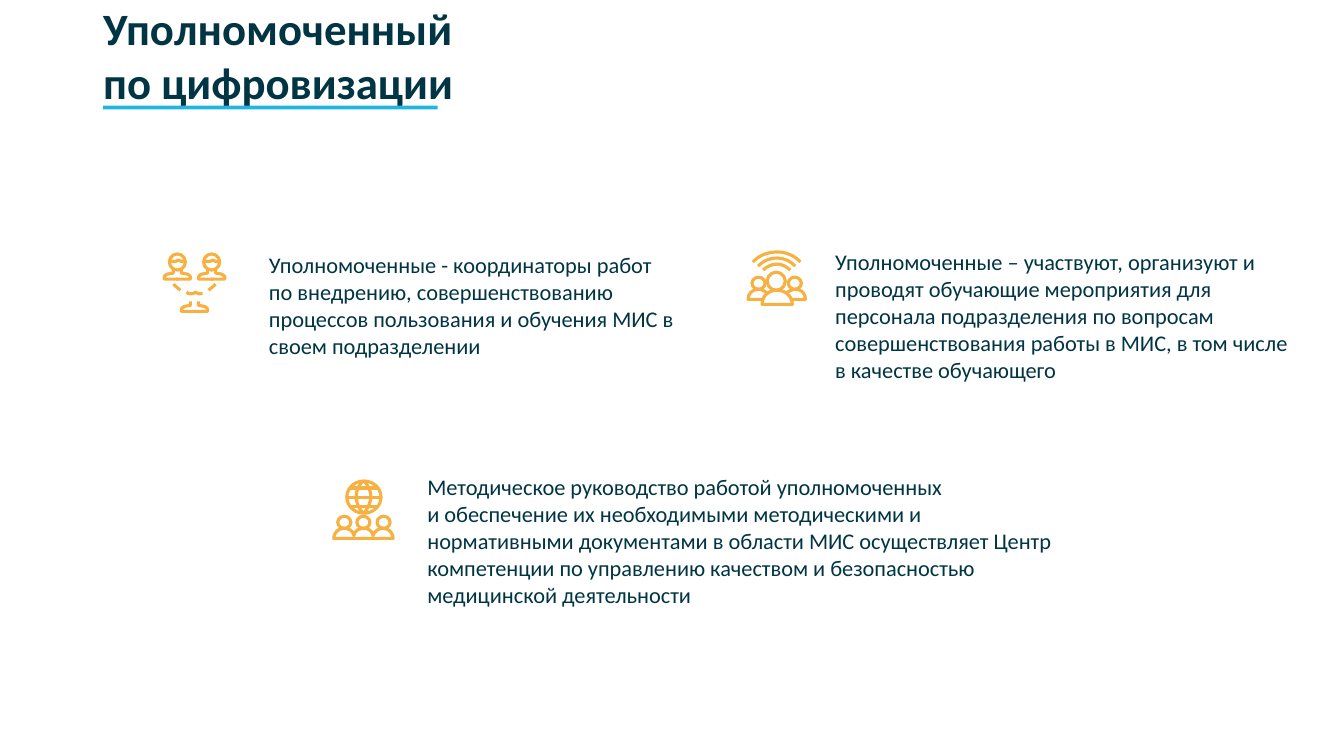
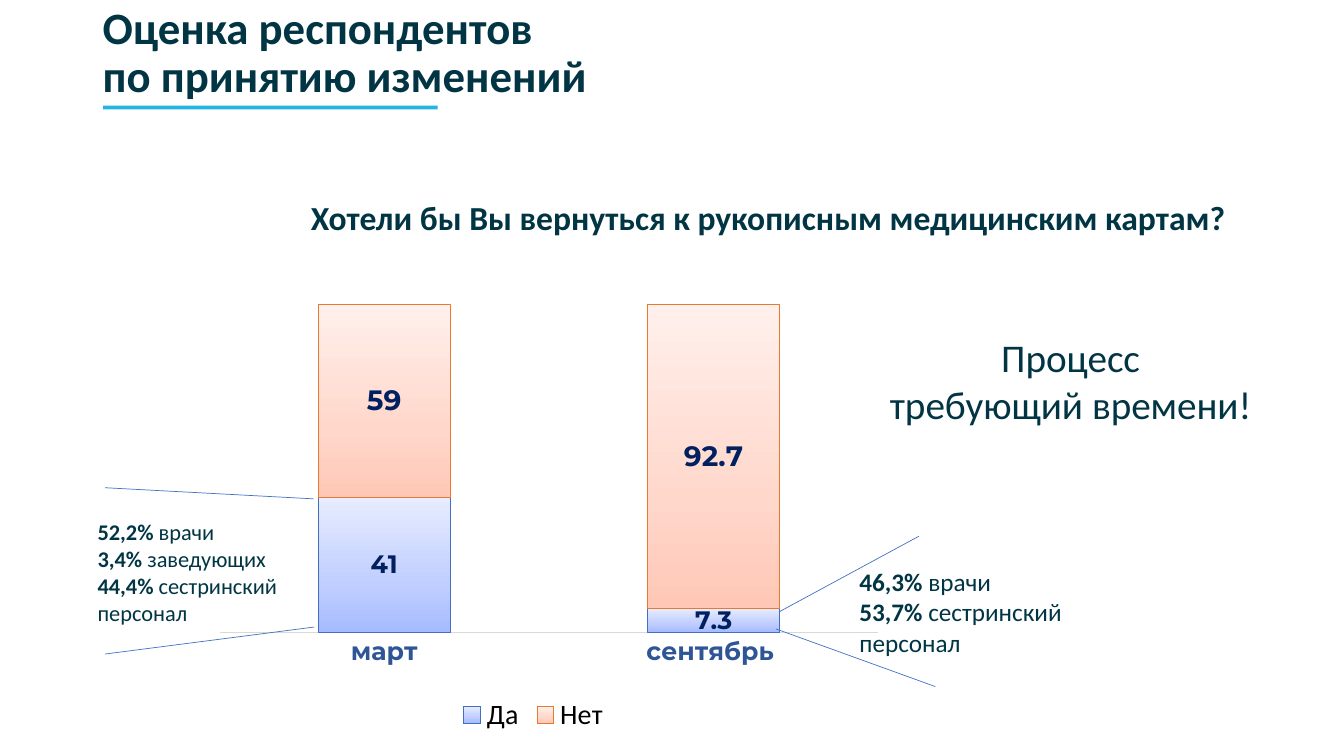
"""Build two slides: the digitalization officers and the survey on accepting change."""
from dataclasses import dataclass
from typing import NamedTuple

from lxml.etree import SubElement
from pptx import Presentation
from pptx.chart.data import CategoryChartData
from pptx.dml.color import RGBColor
from pptx.enum.chart import XL_CHART_TYPE, XL_LABEL_POSITION, XL_LEGEND_POSITION, XL_TICK_MARK
from pptx.enum.shapes import MSO_CONNECTOR, MSO_SHAPE
from pptx.enum.text import MSO_ANCHOR, PP_ALIGN
from pptx.oxml import parse_xml
from pptx.oxml.ns import nsdecls, qn
from pptx.util import Cm, Pt


@dataclass(frozen=True)
class Theme:
    font: str = "Calibri"
    chart_font: str = "Montserrat"
    ink: str = "013544"
    accent: str = "21B6E1"
    icon: str = "F6B142"
    callout: str = "4472C4"
    axis: str = "D9D9D9"
    category: str = "2F5597"
    value: str = "002060"
    black: str = "000000"
    title_size: float = 32
    statement_size: float = 28
    question_size: float = 24
    legend_size: float = 20
    large_size: float = 18
    body_size: float = 16
    chart_size: float = 10
    icon_width: float = 2.25
    chart_width: float = 0.75
    callout_width: float = 0.5


class Box(NamedTuple):
    left: float
    top: float
    width: float
    height: float


class Segment(NamedTuple):
    start_x: float
    start_y: float
    end_x: float
    end_y: float


class Stroke(NamedTuple):
    start: tuple
    steps: tuple
    closed: bool = False


@dataclass(frozen=True)
class Icon:
    left: float
    top: float
    circles: tuple
    strokes: tuple
    segments: tuple = ()


@dataclass(frozen=True)
class Answer:
    name: str
    values: tuple
    gradient: tuple
    outline: str
    label_size: float


THEME = Theme()
ICON_UNIT = Cm(2.54) / 100
GRADIENT_POSITIONS = (0, 35, 100)
AXIS_MAXIMUM = 120
PLOT_AREA = {"x": 0.045, "y": 0.025, "w": 0.955, "h": 0.769}


def shifted(stroke: Stroke, right: float, down: float) -> Stroke:
    """Return the stroke moved by the given icon units."""
    def move(values: tuple) -> tuple:
        return tuple(value + (down if index % 2 else right) for index, value in enumerate(values))
    return Stroke(move(stroke.start), tuple(move(step) for step in stroke.steps), stroke.closed)


BUST = (
    Stroke((9, 15), ((9, 19), (3, 20), (1, 21, 0, 22, 0, 23), (0, 25), (14, 25))),
    Stroke((17, 15), ((17, 19), (23, 20), (25, 21, 26, 22, 26, 23), (26, 25), (12, 25))),
    Stroke((21, 7), ((19, 8, 16, 8, 14, 6), (12, 8, 7, 8, 5, 6))),
)
COORDINATORS = Icon(
    4.14, 6.4,
    circles=(Box(5, 0, 16, 16), Box(39, 0, 16, 16)),
    strokes=tuple(shifted(stroke, *offset) for offset in ((0, 0), (34, 0), (17, 32)) for stroke in BUST),
    segments=(Segment(9, 30, 16, 36), Segment(51, 30, 44, 36)),
)
TRAINERS = Icon(
    18.85, 6.35,
    circles=(Box(4, 25, 13, 12), Box(40, 25, 13, 12), Box(19, 20, 18, 18)),
    strokes=(
        Stroke((14, 47), ((0, 47), (0, 41, 5, 37, 10, 37), (14, 37, 17, 39, 19, 41))),
        Stroke((38, 41), ((40, 39, 44, 37, 47, 37), (53, 37, 57, 41, 57, 47), (43, 47))),
        Stroke((15, 18), ((18, 15, 23, 12, 29, 12), (34, 12, 39, 15, 42, 18))),
        Stroke((10, 14), ((15, 9, 21, 6, 29, 6), (36, 6, 42, 9, 47, 14))),
        Stroke((5, 10), ((10, 4, 19, 0, 29, 0), (38, 0, 47, 4, 52, 10))),
        Stroke((44, 52), ((14, 52), (14, 44, 20, 38, 29, 38), (37, 38, 44, 44, 44, 52)), True),
    ),
)
GUIDANCE = Icon(
    8.41, 12.12,
    circles=(Box(13, 0, 34, 32), Box(4, 35, 13, 12), Box(23, 35, 13, 12), Box(43, 35, 13, 12)),
    strokes=(
        Stroke((29, 0), ((20, 9, 20, 21, 29, 32),)),
        Stroke((30, 0), ((39, 9, 39, 21, 30, 32),)),
        Stroke((49, 47), (
            (45, 47, 41, 49, 39, 54), (38, 49, 34, 47, 30, 47), (25, 47, 21, 49, 20, 54),
            (19, 49, 15, 47, 10, 47), (4, 47, 0, 52, 0, 57), (59, 57), (59, 52, 55, 47, 49, 47),
        ), True),
    ),
    segments=(Segment(15, 25, 44, 25), Segment(15, 7, 44, 7), Segment(13, 16, 47, 16)),
)
DUTIES = (
    (COORDINATORS, Box(6.53, 6.21, 10.8, 3.66), (
        "Уполномоченные - координаторы работ по внедрению, совершенствованию процессов "
        "пользования и обучения МИС в своем подразделении",
    )),
    (TRAINERS, Box(20.8, 6.14, 12.01, 4.37), (
        "Уполномоченные – участвуют, организуют и проводят обучающие мероприятия для персонала "
        "подразделения по вопросам совершенствования работы в МИС, в том числе в качестве обучающего",
    )),
    (GUIDANCE, Box(10.52, 11.81, 16.64, 4.37), (
        "Методическое руководство работой уполномоченных",
        "и обеспечение их необходимыми методическими и нормативными документами в области МИС "
        "осуществляет Центр компетенции по управлению качеством и безопасностью медицинской деятельности",
    )),
)
ANSWERS = (
    Answer("Да", (41, 7.3), ("A6BBFF", "C0CEFF", "E7ECFF"), "436FC0", THEME.large_size),
    Answer("Нет", (59, 92.7), ("FFC7B6", "FFD7CB", "FFF0EB"), "E87A30", THEME.legend_size),
)
CALLOUT_LINES = (
    Segment(19.63, 15.42, 23.16, 13.51),
    Segment(2.65, 12.29, 7.9, 12.57),
    Segment(2.65, 16.48, 7.92, 15.8),
    Segment(19.56, 15.85, 23.57, 17.3),
)


def color(value: str) -> RGBColor:
    """Turn a hex string into a colour."""
    return RGBColor.from_string(value)


def style_font(font, size: float, tint: str, *, bold: bool = False, name: str = THEME.font) -> None:
    """Set the face, size, colour and weight of a font."""
    font.name, font.size, font.bold = name, Pt(size), bold
    font.color.rgb = color(tint)


def style_line(line, tint: str, width: float) -> None:
    """Set the colour and width of a line."""
    line.color.rgb = color(tint)
    line.width = Pt(width)


def add_text(slide, box: Box, paragraphs: tuple, *, size: float = THEME.body_size, bold: bool = False,
             align: PP_ALIGN = PP_ALIGN.LEFT, anchor: MSO_ANCHOR = MSO_ANCHOR.TOP,
             spacing: float = 1.0, inset: bool = True) -> None:
    """Add a text box with double asterisks around bold words and newlines as line breaks."""
    frame = slide.shapes.add_textbox(*map(Cm, box)).text_frame
    frame.word_wrap = True
    frame.vertical_anchor = anchor
    if not inset:
        frame.margin_left = frame.margin_right = frame.margin_top = frame.margin_bottom = 0
    for index, text in enumerate(paragraphs):
        paragraph = frame.add_paragraph() if index else frame.paragraphs[0]
        paragraph.alignment = align
        paragraph.line_spacing = spacing
        for row, line in enumerate(text.split("\n")):
            if row:
                paragraph.add_line_break()
            for position, piece in enumerate(line.split("**")):
                if piece:
                    run = paragraph.add_run()
                    run.text = piece
                    style_font(run.font, size, THEME.ink, bold=bold or position % 2 == 1)


def add_title(slide, box: Box, paragraphs: tuple, **layout) -> None:
    """Add the slide title and the rule below it."""
    add_text(slide, box, paragraphs, size=THEME.title_size, bold=True, **layout)
    rule = slide.shapes.add_shape(MSO_SHAPE.RECTANGLE, Cm(2.6), Cm(2.66), Cm(8.43), Cm(0.1))
    rule.shadow.inherit = False
    rule.fill.solid()
    rule.fill.fore_color.rgb = color(THEME.accent)
    rule.line.fill.background()


def add_segment(shapes, ends: tuple, tint: str, width: float) -> None:
    """Add a straight line without a shadow."""
    connector = shapes.add_connector(MSO_CONNECTOR.STRAIGHT, *ends)
    style_line(connector.line, tint, width)
    SubElement(connector._element.spPr, qn("a:effectLst"))


def add_stroke(shapes, stroke: Stroke, place):
    """Draw a stroke as a freeform with true cubic curves."""
    points = [place(*step[index:index + 2]) for step in stroke.steps for index in range(0, len(step), 2)]
    builder = shapes.build_freeform(*place(*stroke.start))
    builder.add_line_segments(points, close=stroke.closed)
    shape = builder.convert_to_shape()
    lines = iter(list(shape._element.spPr.iter(qn("a:lnTo"))))
    for step in stroke.steps:
        first = next(lines)
        if len(step) == 6:
            first.tag = qn("a:cubicBezTo")
            for _ in range(2):
                extra = next(lines)
                first.append(extra[0])
                extra.getparent().remove(extra)
    return shape


def add_icon(slide, icon: Icon) -> None:
    """Draw an outlined icon as one group."""
    shapes = slide.shapes.add_group_shape().shapes

    def place(x: float, y: float) -> tuple:
        return round(Cm(icon.left) + x * ICON_UNIT), round(Cm(icon.top) + y * ICON_UNIT)

    outlines = [
        shapes.add_shape(MSO_SHAPE.OVAL, *place(circle.left, circle.top),
                         round(circle.width * ICON_UNIT), round(circle.height * ICON_UNIT))
        for circle in icon.circles
    ]
    outlines += [add_stroke(shapes, stroke, place) for stroke in icon.strokes]
    for shape in outlines:
        shape.shadow.inherit = False
        shape.fill.background()
        style_line(shape.line, THEME.icon, THEME.icon_width)
    for segment in icon.segments:
        add_segment(shapes, place(*segment[:2]) + place(*segment[2:]), THEME.icon, THEME.icon_width)


def style_answer(series, answer: Answer) -> None:
    """Give a chart series its gradient, outline and labels."""
    stops = "".join(f'<a:gs pos="{position * 1000}"><a:srgbClr val="{tint}"/></a:gs>'
                    for position, tint in zip(GRADIENT_POSITIONS, answer.gradient))
    series._element.get_or_add_spPr().insert(0, parse_xml(
        f'<a:gradFill {nsdecls("a")} rotWithShape="1"><a:gsLst>{stops}</a:gsLst>'
        '<a:lin ang="16200000" scaled="0"/></a:gradFill>'))
    style_line(series.format.line, answer.outline, THEME.chart_width)
    labels = series.data_labels
    labels.show_value = True
    labels.position = XL_LABEL_POSITION.CENTER
    style_font(labels.font, answer.label_size, THEME.value, bold=True, name=THEME.chart_font)


def add_answer_chart(slide) -> None:
    """Add the stacked columns of survey answers."""
    data = CategoryChartData()
    data.categories = ("март", "сентябрь ")
    for answer in ANSWERS:
        data.add_series(answer.name, answer.values)
    chart = slide.shapes.add_chart(XL_CHART_TYPE.COLUMN_STACKED, Cm(4.75), Cm(5.69), Cm(17.4), Cm(12.9), data).chart
    style_font(chart.font, THEME.chart_size, THEME.black)
    chart.has_title = False
    chart.has_legend = True
    chart.legend.position = XL_LEGEND_POSITION.BOTTOM
    chart.legend.include_in_layout = False
    style_font(chart.legend.font, THEME.legend_size, THEME.black)
    months = chart.category_axis
    months.major_tick_mark = months.minor_tick_mark = XL_TICK_MARK.NONE
    style_line(months.format.line, THEME.axis, THEME.chart_width)
    style_font(months.tick_labels.font, THEME.large_size, THEME.category, bold=True, name=THEME.chart_font)
    percent = chart.value_axis
    percent.visible = percent.has_major_gridlines = False
    percent.minimum_scale, percent.maximum_scale = 0, AXIS_MAXIMUM
    plot = chart.plots[0]
    plot.gap_width, plot.overlap, plot.vary_by_categories = 150, 100, False
    for series, answer in zip(plot.series, ANSWERS):
        style_answer(series, answer)
    plot_area = chart._chartSpace.chart.plotArea
    for layout in plot_area.findall(qn("c:layout")):
        plot_area.remove(layout)
    sizes = "".join(f'<c:{key} val="{value}"/>' for key, value in PLOT_AREA.items())
    plot_area.insert(0, parse_xml(
        f'<c:layout {nsdecls("c")}><c:manualLayout><c:layoutTarget val="inner"/>'
        f'<c:xMode val="edge"/><c:yMode val="edge"/>{sizes}</c:manualLayout></c:layout>'))


def build_officer_slide(slide) -> None:
    """Show what the digitalization officers do."""
    add_title(slide, Box(2.6, 0.03, 18.92, 2.74), ("Уполномоченный", "по цифровизации"), inset=False)
    for icon, box, paragraphs in DUTIES:
        add_icon(slide, icon)
        add_text(slide, box, paragraphs)


def build_survey_slide(slide) -> None:
    """Show the answers of the respondents."""
    add_title(slide, Box(2.34, -0.48, 29.21, 3.68), ("Оценка респондентов \nпо принятию изменений",),
              anchor=MSO_ANCHOR.MIDDLE, spacing=0.9)
    add_answer_chart(slide)
    add_text(slide, Box(22, 8.28, 9.96, 2.64), ("Процесс", "требующий времени!"),
             size=THEME.statement_size, align=PP_ALIGN.CENTER)
    add_text(slide, Box(3.28, 4.83, 32.16, 1.27), ("Хотели бы Вы вернуться к рукописным медицинским картам?",),
             size=THEME.question_size, bold=True, align=PP_ALIGN.CENTER)
    add_text(slide, Box(2.21, 12.93, 6.53, 4.37),
             ("**52,2% **врачи", "**3,4% **заведующих", "**44,4% **сестринский персонал"))
    add_text(slide, Box(21.41, 14.15, 7.26, 4.11),
             ("**46,3% **врачи", "**53,7% **сестринский персонал"), size=THEME.large_size)
    for segment in CALLOUT_LINES:
        add_segment(slide.shapes, tuple(map(Cm, segment)), THEME.callout, THEME.callout_width)


def main() -> None:
    """Build and save the presentation."""
    presentation = Presentation()
    presentation.slide_width, presentation.slide_height = Cm(33.87), Cm(19.05)
    for build in (build_officer_slide, build_survey_slide):
        build(presentation.slides.add_slide(presentation.slide_layouts[6]))
    presentation.save("out.pptx")


if __name__ == "__main__":
    main()
